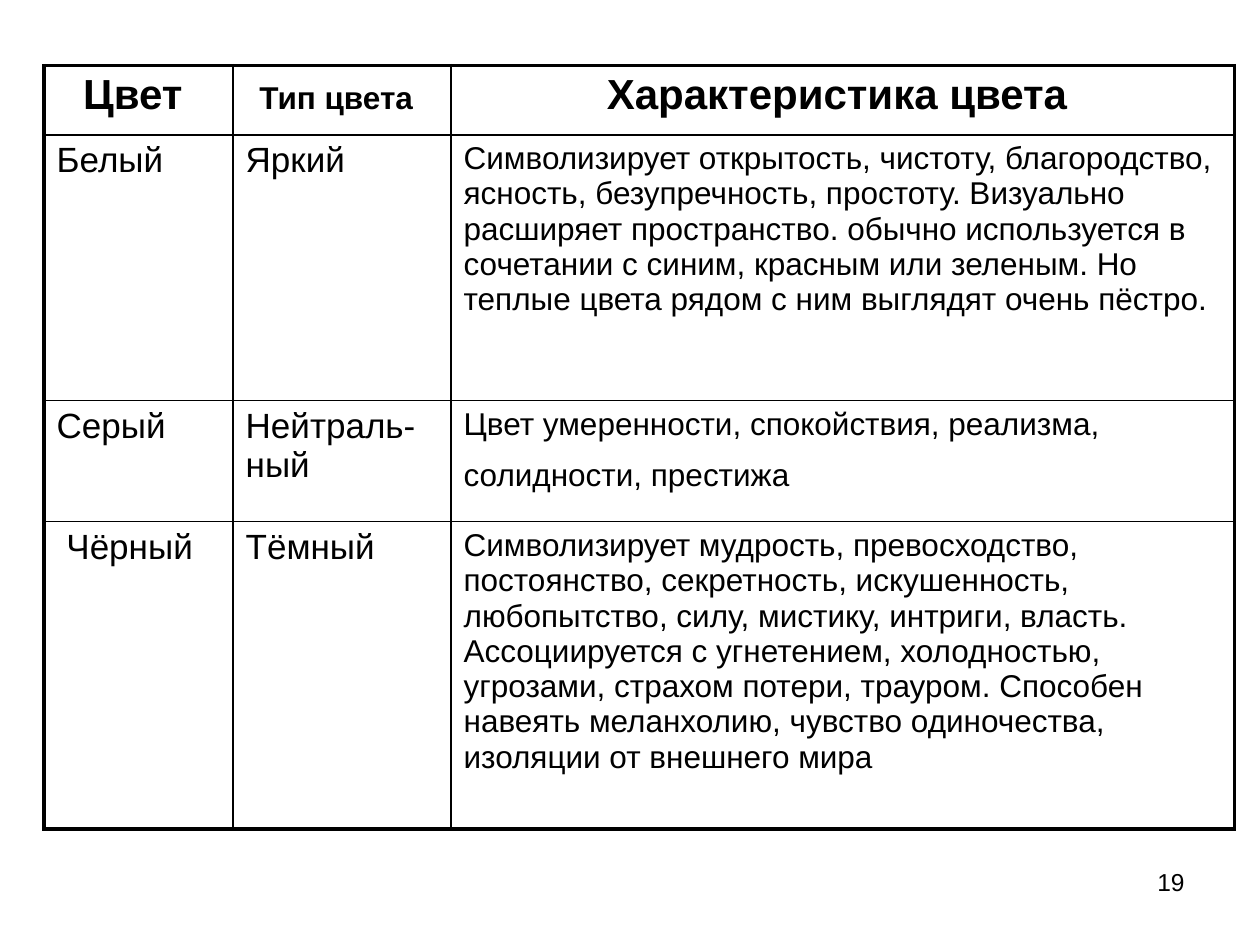
import pptx
import pptx.util
import pptx.dml.color
import pptx.enum.text
import pptx.oxml
import pptx.oxml.ns
from lxml import etree

Inches, Pt = pptx.util.Inches, pptx.util.Pt
ALIGN = pptx.enum.text.PP_ALIGN

COLORS = {"ink": "000000"}
FONT = "Arial"
THIN, THICK = 1, 2.25

# Each cell is a list of (text, size, bold) runs.
HEADER = [
    [("Цвет ", 24, True)],
    [("Тип цвета", 18, True), (" ", 24, False)],
    [("Характеристика цвета ", 24, True)],
]
BODY = [
    [
        [("Белый", 20, False)],
        [("Яркий", 20, False)],
        [("Символизирует открытость, чистоту, благородство, ясность, "
          "безупречность, простоту. Визуально расширяет пространство. обычно "
          "используется в сочетании с синим, красным или зеленым. Но теплые "
          "цвета рядом с ним выглядят очень пёстро.", 18, False)],
    ],
    [
        [("Серый", 20, False)],
        [("Нейтраль-ный", 20, False)],
        [("Цвет умеренности, спокойствия, реализма, солидности, престижа",
          18, False), (" ", 28, False)],
    ],
    [
        [(" Чёрный", 20, False)],
        [("Тёмный", 20, False)],
        [("Символизирует мудрость, превосходство, постоянство, секретность, "
          "искушенность, любопытство, силу, мистику, интриги, власть. "
          "Ассоциируется с угнетением, холодностью, угрозами, страхом потери, "
          "трауром. Способен навеять меланхолию, чувство одиночества, изоляции "
          "от внешнего мира", 18, False)],
    ],
]
ROWS = [HEADER] + BODY
COLUMN_WIDTHS = [1.5, 1.73, 6.22]
ROW_HEIGHTS = [0.55, 2.11, 0.96, 2.44]


def add_run(paragraph, text, size=18, bold=False, color="ink"):
    run = paragraph.add_run()
    run.text = text
    run.font.name = FONT
    run.font.size = Pt(size)
    run.font.bold = bold
    run.font.color.rgb = pptx.dml.color.RGBColor.from_string(COLORS[color])


def set_space_before(paragraph, percent):
    """Space before a paragraph as a share of its text size."""
    properties = paragraph._p.get_or_add_pPr()
    space = etree.SubElement(properties, pptx.oxml.ns.qn("a:spcBef"))
    etree.SubElement(space, pptx.oxml.ns.qn("a:spcPct"), val=str(percent * 1000))


def set_borders(cell, widths):
    """Draw cell borders; widths maps L, R, T, B to points, in that order."""
    properties = cell._tc.get_or_add_tcPr()
    for index, (side, width) in enumerate(widths.items()):
        line = pptx.oxml.parse_xml(
            f'<a:ln{side} {pptx.oxml.ns.nsdecls("a")} w="{int(Pt(width))}">'
            f'<a:solidFill><a:srgbClr val="{COLORS["ink"]}"/></a:solidFill>'
            f'<a:prstDash val="solid"/></a:ln{side}>')
        properties.insert(index, line)


def add_color_table(slide):
    last_row, last_column = len(ROWS) - 1, len(COLUMN_WIDTHS) - 1
    frame = slide.shapes.add_table(
        len(ROWS), len(COLUMN_WIDTHS), Inches(0.35), Inches(0.52),
        Inches(sum(COLUMN_WIDTHS)), Inches(sum(ROW_HEIGHTS)))
    table = frame.table
    table.first_row = table.horz_banding = False
    for column, width in zip(table.columns, COLUMN_WIDTHS):
        column.width = Inches(width)
    for row, height in zip(table.rows, ROW_HEIGHTS):
        row.height = Inches(height)
    for r, row in enumerate(ROWS):
        for c, runs in enumerate(row):
            cell = table.cell(r, c)
            cell.fill.background()
            set_borders(cell, {
                "L": THICK if c == 0 else THIN,
                "R": THICK if c == last_column else THIN,
                "T": THICK if r == 0 else THIN,
                "B": THICK if r == last_row else THIN,
            })
            paragraph = cell.text_frame.paragraphs[0]
            paragraph.alignment = ALIGN.CENTER if r == 0 else ALIGN.LEFT
            set_space_before(paragraph, 20)
            for text, size, bold in runs:
                add_run(paragraph, text, size=size, bold=bold)


def add_page_number(slide, number):
    box = slide.shapes.add_textbox(
        Inches(7.17), Inches(6.83), Inches(2.33), Inches(0.52))
    box.text_frame.word_wrap = True
    paragraph = box.text_frame.paragraphs[0]
    paragraph.alignment = ALIGN.RIGHT
    add_run(paragraph, number, size=14)


def main():
    presentation = pptx.Presentation()
    presentation.slide_width = Inches(10)
    presentation.slide_height = Inches(7.5)
    slide = presentation.slides.add_slide(presentation.slide_layouts[6])
    add_page_number(slide, "19")
    add_color_table(slide)
    presentation.save("out.pptx")


if __name__ == "__main__":
    main()
